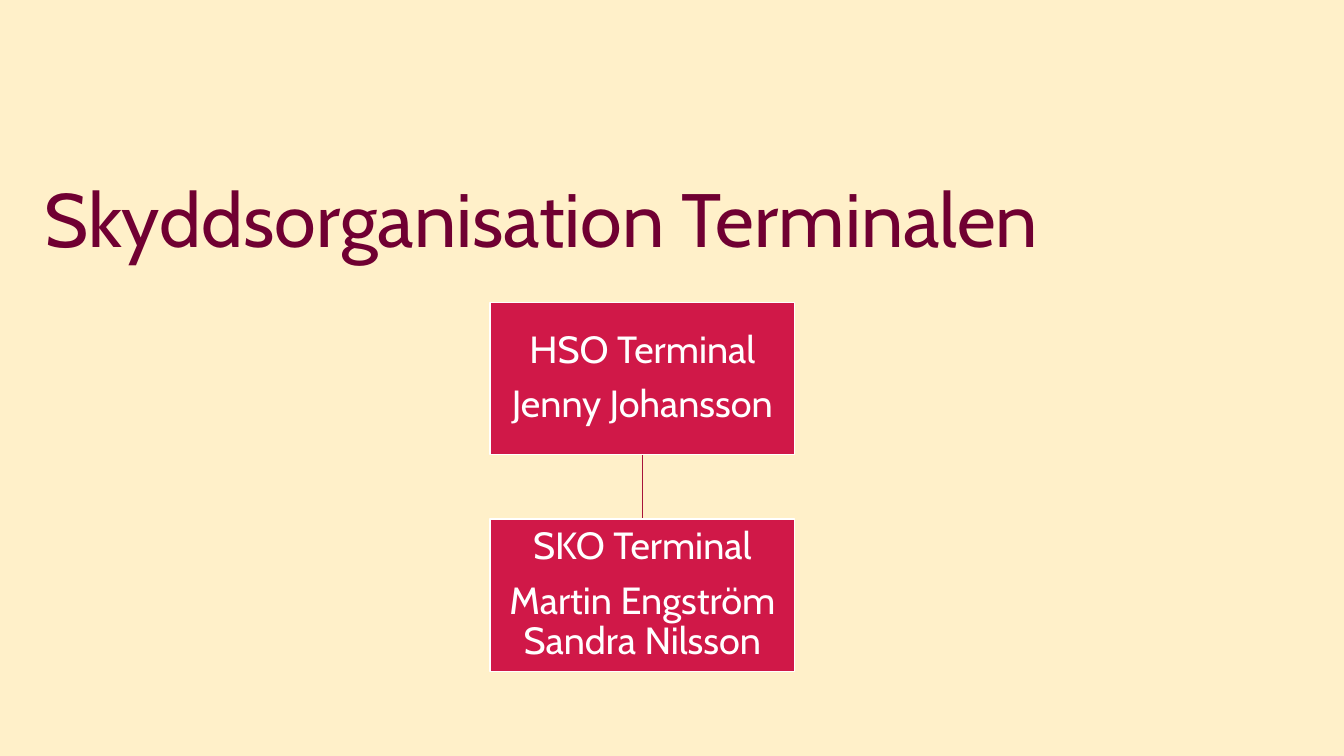
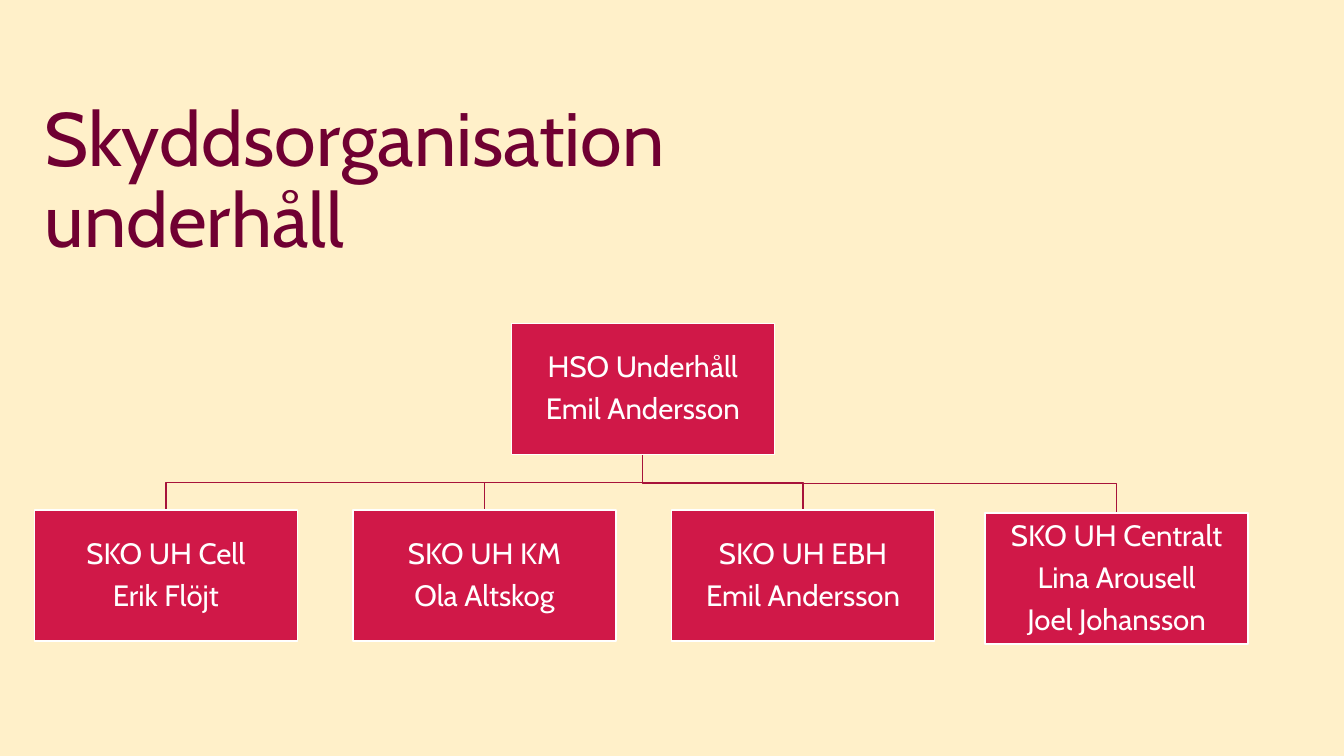
"""Build two slides that chart a safety organisation."""
from dataclasses import dataclass

from pptx import Presentation
from pptx.dml.color import RGBColor
from pptx.enum.shapes import MSO_CONNECTOR, MSO_SHAPE
from pptx.enum.text import MSO_ANCHOR, MSO_AUTO_SIZE, PP_ALIGN
from pptx.oxml.ns import qn
from pptx.util import Inches, Pt
from lxml.etree import SubElement


@dataclass(frozen=True)
class Theme:
    """Colours, type and line settings shared by the slides."""
    background: RGBColor = RGBColor.from_string("FFF0C9")
    title: RGBColor = RGBColor.from_string("700032")
    node: RGBColor = RGBColor.from_string("D01848")
    link: RGBColor = RGBColor.from_string("A7133A")
    white: RGBColor = RGBColor.from_string("FFFFFF")
    font: str = "Cabin"
    title_size: int = 54
    large_size: int = 27
    small_size: int = 21
    line_spacing: float = 0.9
    space_ratio: float = 0.35
    line_width: int = 1


@dataclass(frozen=True)
class Node:
    """Place and wording of one box, in inches."""
    left: float
    top: float
    width: float
    height: float
    lines: tuple

    @property
    def middle(self):
        """Return the horizontal centre."""
        return self.left + self.width / 2

    @property
    def bottom(self):
        """Return the lower edge."""
        return self.top + self.height


THEME = Theme()


def write_text(frame, lines, *, size, color, align, anchor, space_after=0):
    """Fill a text frame with one formatted paragraph per line."""
    frame.word_wrap = True
    frame.auto_size = MSO_AUTO_SIZE.NONE
    frame.vertical_anchor = anchor
    for index, line in enumerate(lines):
        para = frame.paragraphs[0] if index == 0 else frame.add_paragraph()
        para.alignment = align
        para.line_spacing = THEME.line_spacing
        para.space_before = Pt(0)
        para.space_after = Pt(space_after)
        span = para.add_run()
        span.text = line
        span.font.name = THEME.font
        span.font.size = Pt(size)
        span.font.color.rgb = color


def add_page(deck, title, title_width):
    """Add a title-only slide and place its title."""
    page = deck.slides.add_slide(deck.slide_layouts.get_by_name("Title Only"))
    box = page.shapes.title
    box.left, box.top = Inches(0.34), Inches(0.79)
    box.width, box.height = Inches(title_width), Inches(1.88)
    write_text(box.text_frame, [title], size=THEME.title_size, color=THEME.title,
               align=PP_ALIGN.LEFT, anchor=MSO_ANCHOR.BOTTOM)
    return page


def add_node(page, node, size, inset):
    """Draw one box of the chart with its text."""
    box = page.shapes.add_shape(MSO_SHAPE.RECTANGLE, Inches(node.left), Inches(node.top),
                                Inches(node.width), Inches(node.height))
    box.shadow.inherit = False
    box.fill.solid()
    box.fill.fore_color.rgb = THEME.node
    box.line.color.rgb = THEME.white
    box.line.width = Pt(THEME.line_width)
    frame = box.text_frame
    frame.margin_left = frame.margin_right = Inches(inset)
    frame.margin_top = frame.margin_bottom = Inches(inset)
    write_text(frame, node.lines, size=size, color=THEME.white, align=PP_ALIGN.CENTER,
               anchor=MSO_ANCHOR.MIDDLE, space_after=size * THEME.space_ratio)


def add_link(page, parent, child):
    """Join two boxes with a straight line, or a stepped one if they are offset."""
    start = Inches(parent.middle), Inches(parent.bottom)
    end = Inches(child.middle), Inches(child.top)
    if start[0] == end[0]:
        link = page.shapes.add_connector(MSO_CONNECTOR.STRAIGHT, *start, *end)
        SubElement(link._element.spPr, qn("a:effectLst"))
    else:
        bend = (start[1] + end[1]) // 2
        outline = page.shapes.build_freeform(*start)
        outline.add_line_segments([(start[0], bend), (end[0], bend), end], close=False)
        link = outline.convert_to_shape()
        link.shadow.inherit = False
        link.fill.background()
    link.line.color.rgb = THEME.link
    link.line.width = Pt(THEME.line_width)


def add_chart_tree(page, parent, children, *, size, inset):
    """Draw a parent box, its children and the links behind them."""
    for child in children:
        add_link(page, parent, child)
    for node in (parent, *children):
        add_node(page, node, size, inset)


def add_terminal_page(deck):
    """Add the terminal organisation."""
    page = add_page(deck, "Skyddsorganisation Terminalen", 10.23)
    left, width, height = 4.86, 3.02, 1.51
    parent = Node(left, 3, width, height, ("HSO Terminal", "Jenny Johansson"))
    child = Node(left, 5.15, width, height,
                 ("SKO Terminal", "Martin Engström Sandra Nilsson"))
    add_chart_tree(page, parent, [child], size=THEME.large_size, inset=0.02)


def add_maintenance_page(deck):
    """Add the maintenance organisation."""
    page = add_page(deck, "Skyddsorganisation underhåll", 7.02)
    width, height, step = 2.61, 1.3, 3.16
    teams = [("SKO UH Cell", "Erik Flöjt"),
             ("SKO UH KM", "Ola Altskog"),
             ("SKO UH EBH", "Emil Andersson")]
    parent = Node(5.07, 3.21, width, height, ("HSO Underhåll", "Emil Andersson"))
    children = [Node(0.34 + index * step, 5.06, width, height, lines)
                for index, lines in enumerate(teams)]
    children.append(Node(9.77, 5.09, width, height,
                         ("SKO UH Centralt", "Lina Arousell", "Joel Johansson")))
    add_chart_tree(page, parent, children, size=THEME.small_size, inset=0.01)


def main():
    """Build and save the deck."""
    deck = Presentation()
    deck.slide_width, deck.slide_height = Inches(13.33), Inches(7.5)
    fill = deck.slide_master.background.fill
    fill.solid()
    fill.fore_color.rgb = THEME.background
    add_terminal_page(deck)
    add_maintenance_page(deck)
    deck.save("out.pptx")


if __name__ == "__main__":
    main()
